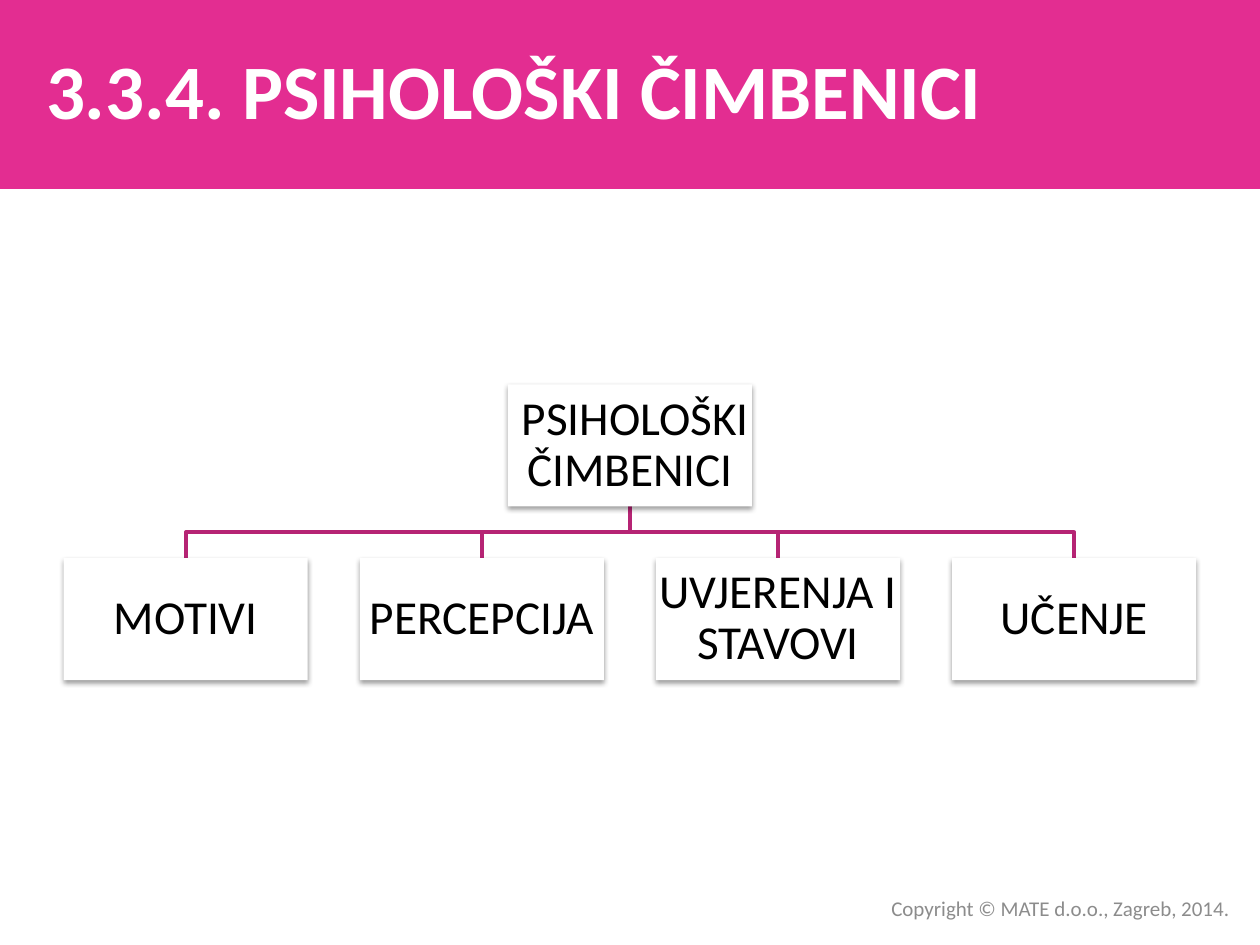
from dataclasses import dataclass

from lxml.etree import SubElement
from pptx import Presentation
from pptx.dml.color import RGBColor
from pptx.enum.shapes import MSO_SHAPE as Preset
from pptx.enum.text import MSO_ANCHOR as Anchor, PP_ALIGN as Align
from pptx.oxml.ns import qn
from pptx.shapes.autoshape import Shape
from pptx.slide import Slide
from pptx.util import Cm, Pt

FONT = "Calibri"
PINK, PLUM, WHITE, BLACK, GREY = "E32D91", "B62474", "FFFFFF", "000000", "8C8C8C"
PAGE_WIDTH, PAGE_HEIGHT = 25.4, 19.05
NODE_WIDTH, NODE_HEIGHT = 4.92, 2.46
NODE_PITCH = 5.97
ROOT_TOP, LEAF_TOP = 7.75, 11.25
LEAF_LABELS = ["MOTIVI", "PERCEPCIJA", "UVJERENJA I STAVOVI", "UČENJE"]


@dataclass
class Node:
    """A chart box, placed in centimetres by its centre line and top."""
    label: str
    centre: float
    top: float


@dataclass
class Style:
    size: float
    color: str
    align: Align = Align.CENTER
    bold: bool = False
    line_spacing: float = 1.0


TITLE_STYLE = Style(44, WHITE, bold=True)
NODE_STYLE = Style(27, BLACK, line_spacing=0.9)
FOOTER_STYLE = Style(12, GREY, Align.RIGHT)


def rgb(color: str) -> RGBColor:
    return RGBColor.from_string(color)


def write(box: Shape, text: str, style: Style) -> None:
    frame = box.text_frame
    frame.word_wrap = True
    frame.vertical_anchor = Anchor.MIDDLE
    para = frame.paragraphs[0]
    para.text = text
    para.alignment = style.align
    para.line_spacing = style.line_spacing
    para.font.name = FONT
    para.font.size = Pt(style.size)
    para.font.bold = style.bold
    para.font.color.rgb = rgb(style.color)


def add_text(page: Slide, left: float, top: float, width: float, height: float,
             text: str, style: Style) -> None:
    box = page.shapes.add_textbox(Cm(left), Cm(top), Cm(width), Cm(height))
    write(box, text, style)


def add_rectangle(page: Slide, left: float, top: float, width: float,
                  height: float, color: str) -> Shape:
    box = page.shapes.add_shape(Preset.RECTANGLE, Cm(left), Cm(top), Cm(width), Cm(height))
    box.fill.solid()
    box.fill.fore_color.rgb = rgb(color)
    box.line.fill.background()
    box.shadow.inherit = False
    return box


def add_soft_shadow(box: Shape) -> None:
    effects = box._element.spPr.find(qn("a:effectLst"))
    shadow = SubElement(effects, qn("a:outerShdw"), blurRad=str(Pt(3.1)),
                        dist=str(Pt(1.6)), dir="5400000", rotWithShape="0")
    color = SubElement(shadow, qn("a:srgbClr"), val=BLACK)
    SubElement(color, qn("a:alpha"), val="38000")


def add_node(page: Slide, node: Node) -> None:
    box = add_rectangle(page, node.centre - NODE_WIDTH / 2, node.top,
                        NODE_WIDTH, NODE_HEIGHT, WHITE)
    add_soft_shadow(box)
    frame = box.text_frame
    frame.margin_left = frame.margin_right = Cm(0.05)
    frame.margin_top = frame.margin_bottom = Cm(0.05)
    write(box, node.label, NODE_STYLE)


def add_branch(page: Slide, parent: Node, child: Node) -> None:
    start = parent.top + NODE_HEIGHT
    middle = (start + child.top) / 2
    builder = page.shapes.build_freeform(Cm(parent.centre), Cm(start))
    corners = [(parent.centre, middle), (child.centre, middle), (child.centre, child.top)]
    builder.add_line_segments([(Cm(x), Cm(y)) for x, y in corners], close=False)
    branch = builder.convert_to_shape()
    branch.fill.background()
    branch.line.color.rgb = rgb(PLUM)
    branch.line.width = Pt(2)
    branch.shadow.inherit = False


def main() -> None:
    deck = Presentation()
    deck.slide_width, deck.slide_height = Cm(PAGE_WIDTH), Cm(PAGE_HEIGHT)
    page = deck.slides.add_slide(deck.slide_layouts[6])

    add_rectangle(page, 0, 0, PAGE_WIDTH, 3.81, PINK)
    add_text(page, 0, 0.2, 20.75, 3.18, "3.3.4. PSIHOLOŠKI ČIMBENICI", TITLE_STYLE)

    middle = PAGE_WIDTH / 2
    root = Node(" PSIHOLOŠKI ČIMBENICI", middle, ROOT_TOP)
    first = middle - NODE_PITCH * (len(LEAF_LABELS) - 1) / 2
    leaves = [Node(label, first + index * NODE_PITCH, LEAF_TOP)
              for index, label in enumerate(LEAF_LABELS)]
    for leaf in reversed(leaves):
        add_branch(page, root, leaf)
    for node in [root, *leaves]:
        add_node(page, node)

    add_text(page, 11.91, 17.93, 13.13, 0.76,
             "Copyright © MATE d.o.o., Zagreb, 2014.", FOOTER_STYLE)
    deck.save("out.pptx")


if __name__ == "__main__":
    main()
